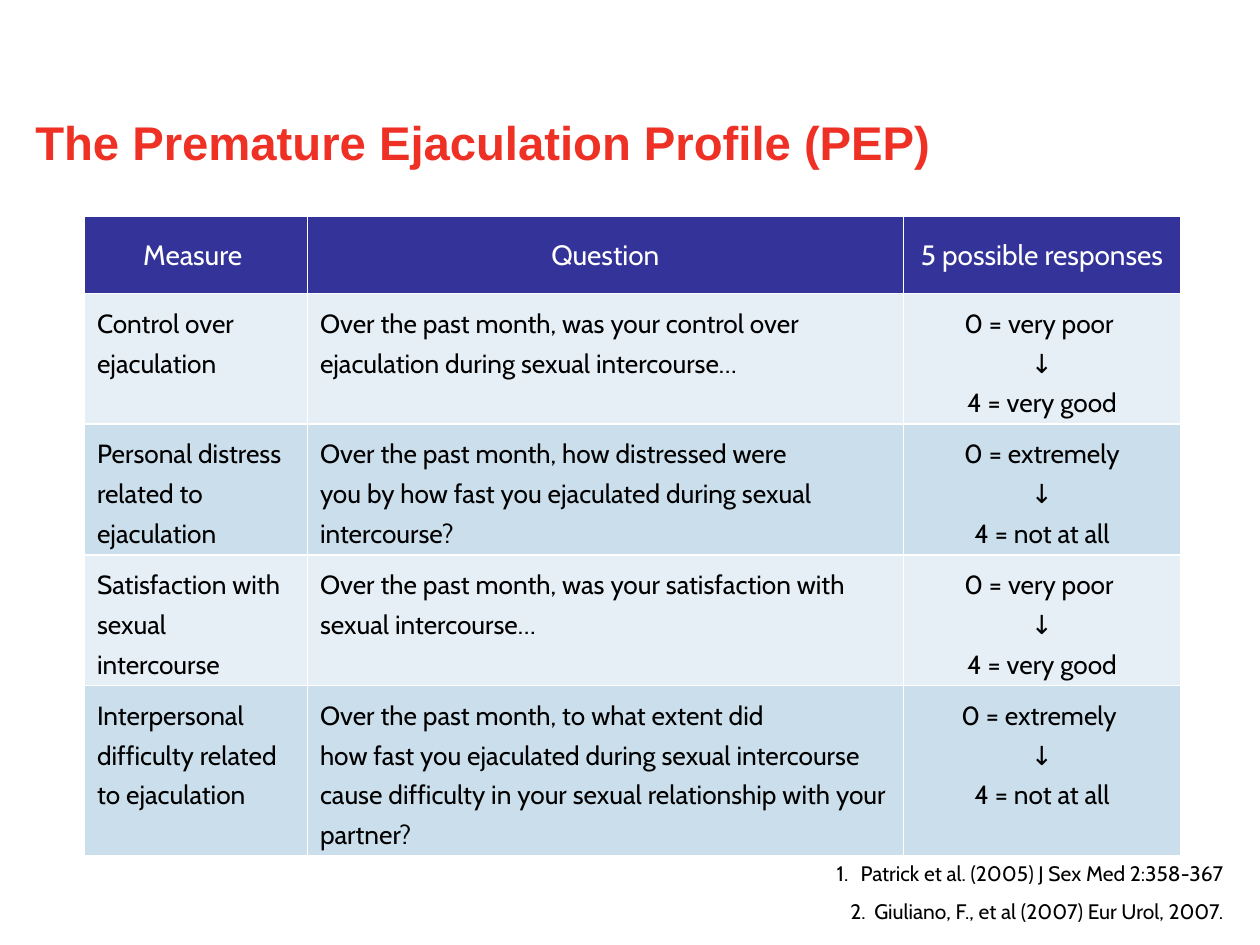
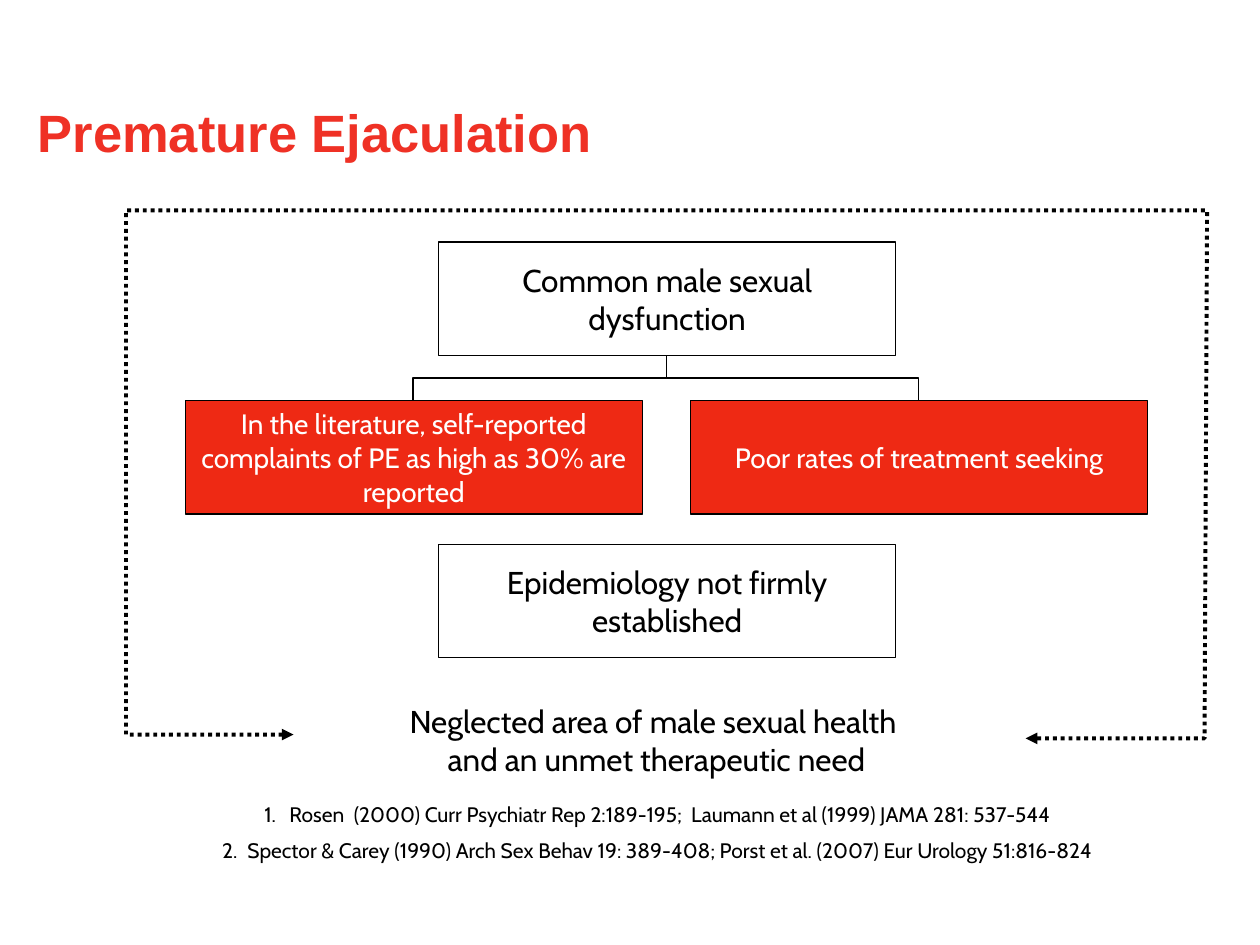
from dataclasses import dataclass, field
from typing import Any, NamedTuple

from lxml.etree import SubElement
from pptx import Presentation
from pptx.dml.color import RGBColor
from pptx.enum.dml import MSO_LINE
from pptx.enum.shapes import MSO_CONNECTOR, MSO_SHAPE
from pptx.enum.text import MSO_ANCHOR, PP_ALIGN
from pptx.oxml.ns import qn
from pptx.util import Emu, Pt

EMU_PER_PX = 9144  # 100 px to the inch


# Theme
@dataclass(frozen=True)
class Theme:
    title_font: str = "Arial"
    body_font: str = "Cabin"
    title: str = "EF3125"
    ink: str = "000000"
    paper: str = "FFFFFF"
    header: str = "333399"
    finding: str = "EE2914"
    bands: tuple[str, str] = ("E7EFF6", "CBDEEC")
    statement_size: int = 18
    finding_size: int = 16
    header_size: int = 16
    body_size: int = 15
    reference_size: int = 12


THEME = Theme()


class Box(NamedTuple):
    left: int
    top: int
    width: int
    height: int


class Point(NamedTuple):
    x: int
    y: int


class Insets(NamedTuple):
    left: int = 0
    top: int = 0
    right: int = 0
    bottom: int = 0


@dataclass(frozen=True)
class TextStyle:
    size: int
    color: str = THEME.ink
    font: str = THEME.body_font
    bold: bool = False
    paragraph: dict[str, Any] = field(default_factory=dict)
    gap: int = 0
    number_indent: int = 0


class Panel(NamedTuple):
    text: str
    box: Box
    fill: str
    style: TextStyle


CENTERED = {"alignment": PP_ALIGN.CENTER}
STATEMENT = TextStyle(THEME.statement_size, paragraph=CENTERED)
FINDING = TextStyle(THEME.finding_size, THEME.paper, paragraph=CENTERED)
HEADER = TextStyle(THEME.header_size, THEME.paper, paragraph=CENTERED)
QUESTION = TextStyle(THEME.body_size, paragraph={"line_spacing": 1.25})
RESPONSE = TextStyle(THEME.body_size, paragraph={"line_spacing": 1.25, **CENTERED})


# Shared helpers
def px(length: float) -> Emu:
    return Emu(round(length * EMU_PER_PX))


def rgb(color: str) -> RGBColor:
    return RGBColor.from_string(color)


def apply(target: Any, values: dict[str, Any]) -> None:
    for name, value in values.items():
        setattr(target, name, value)


def margins(insets: Insets) -> dict[str, Emu]:
    return {f"margin_{side}": px(inset) for side, inset in insets._asdict().items()}


def write(frame: Any, lines: list[str], style: TextStyle) -> None:
    for index, line in enumerate(lines):
        paragraph = frame.add_paragraph() if index else frame.paragraphs[0]
        paragraph.text = line
        if style.number_indent:
            properties = paragraph._p.get_or_add_pPr()
            indent = px(style.number_indent)
            properties.set("marL", str(indent))
            properties.set("indent", str(-indent))
            SubElement(properties, qn("a:buAutoNum"), type="arabicPeriod")
        apply(paragraph, style.paragraph)
        if index and style.gap:
            paragraph.space_before = Pt(style.gap)
        for run in paragraph.runs:
            apply(run.font, {"name": style.font, "size": Pt(style.size), "bold": style.bold})
            run.font.color.rgb = rgb(style.color)


def add_text(slide: Any, lines: list[str], box: Box, style: TextStyle,
             insets: Insets = Insets(), anchor: MSO_ANCHOR = MSO_ANCHOR.TOP) -> None:
    frame = slide.shapes.add_textbox(*map(px, box)).text_frame
    apply(frame, {"word_wrap": True, "vertical_anchor": anchor, **margins(insets)})
    write(frame, lines, style)


def add_title(slide: Any, text: str, box: Box, size: int) -> None:
    style = TextStyle(size, THEME.title, THEME.title_font, True, {"line_spacing": 0.95})
    add_text(slide, [text], box, style, Insets(top=8), MSO_ANCHOR.MIDDLE)


def set_line(line: Any, width: float) -> None:
    line.color.rgb = rgb(THEME.ink)
    line.width = Pt(width)


# Profile table
COLUMN_WIDTHS = (177, 473, 220)
ROW_HEIGHTS = (61, 100, 100, 100, 130)
HEADINGS = ("Measure ", "Question", "5 possible responses")
MEASURES = (
    ("Control over ejaculation",
     "Over the past month, was your control over ejaculation during sexual intercourse…",
     "0 = very poor \n↓\n4 = very good"),
    ("Personal distress related to ejaculation",
     "Over the past month, how distressed were \n"
     "you by how fast you ejaculated during sexual intercourse?",
     "0 = extremely\n↓\n4 = not at all"),
    ("Satisfaction with sexual intercourse",
     "Over the past month, was your satisfaction with sexual intercourse…",
     "0 = very poor \n↓\n4 = very good"),
    ("Interpersonal difficulty related to ejaculation",
     "Over the past month, to what extent did \n"
     "how fast you ejaculated during sexual intercourse cause difficulty "
     "in your sexual relationship with your partner?",
     "0 = extremely \n↓\n4 = not at all"),
)


def add_borders(cell: Any) -> None:
    properties = cell._tc.get_or_add_tcPr()
    for edge in ("lnL", "lnR", "lnT", "lnB"):
        border = SubElement(properties, qn(f"a:{edge}"), w=str(Pt(1)))
        SubElement(SubElement(border, qn("a:solidFill")), qn("a:srgbClr"), val=THEME.paper)


def fill_cell(cell: Any, text: str, row: int, column: int) -> None:
    insets = Insets(10, 5, 6 if row and column == 1 else 10, 5)
    anchor = MSO_ANCHOR.TOP if row else MSO_ANCHOR.MIDDLE
    apply(cell, {"vertical_anchor": anchor, **margins(insets)})
    add_borders(cell)
    cell.fill.solid()
    cell.fill.fore_color.rgb = rgb(THEME.bands[(row - 1) % 2] if row else THEME.header)
    body = RESPONSE if column == 2 else QUESTION
    write(cell.text_frame, [text], body if row else HEADER)


def add_profile_table(slide: Any) -> None:
    box = Box(67, 172, sum(COLUMN_WIDTHS), sum(ROW_HEIGHTS))
    table = slide.shapes.add_table(len(ROW_HEIGHTS), len(COLUMN_WIDTHS), *map(px, box)).table
    apply(table, {"first_row": False, "horz_banding": False})
    for column, width in zip(table.columns, COLUMN_WIDTHS):
        column.width = px(width)
    for row, height in zip(table.rows, ROW_HEIGHTS):
        row.height = px(height)
    for row_index, texts in enumerate((HEADINGS, *MEASURES)):
        for column_index, text in enumerate(texts):
            fill_cell(table.cell(row_index, column_index), text, row_index, column_index)


def build_profile(slide: Any) -> None:
    add_title(slide, "The Premature Ejaculation Profile (PEP)", Box(28, 85, 972, 51), 27)
    add_profile_table(slide)
    references = TextStyle(THEME.reference_size, gap=6, number_indent=19,
                           paragraph={"alignment": PP_ALIGN.RIGHT, "line_spacing": 1.1})
    add_text(slide, ["Patrick et al. (2005) J Sex Med 2:358-367",
                     "Giuliano, F., et al (2007) Eur Urol, 2007."],
             Box(92, 676, 889, 65), references, Insets(10, 5, 10, 5))


# Overview diagram
PANEL_WIDTH, PANEL_HEIGHT = 363, 90
STATEMENT_LEFT, FINDING_LEFTS, FINDING_TOP = 348, (147, 548), 318
STATEMENT_TOP = 192
PANELS = [
    Panel(text, Box(left, top, PANEL_WIDTH, PANEL_HEIGHT), fill, style)
    for text, left, top, fill, style in (
        ("Common male sexual dysfunction", STATEMENT_LEFT, STATEMENT_TOP,
         THEME.paper, STATEMENT),
        ("Epidemiology not firmly established", STATEMENT_LEFT, 432, THEME.paper, STATEMENT),
        ("In the literature, self-reported complaints of PE as high as 30% are reported",
         FINDING_LEFTS[0], FINDING_TOP, THEME.finding, FINDING),
        ("Poor rates of treatment seeking",
         FINDING_LEFTS[1], FINDING_TOP, THEME.finding, FINDING),
    )
]
NEED_LOOP = [Point(233, 583), Point(100, 583), Point(100, 167),
             Point(958, 167), Point(956, 586), Point(814, 586)]


def add_panel(slide: Any, panel: Panel) -> None:
    shape = slide.shapes.add_shape(MSO_SHAPE.RECTANGLE, *map(px, panel.box))
    shape.shadow.inherit = False
    shape.fill.solid()
    shape.fill.fore_color.rgb = rgb(panel.fill)
    set_line(shape.line, 0.75)
    apply(shape.text_frame, {"word_wrap": True, "vertical_anchor": MSO_ANCHOR.MIDDLE,
                             **margins(Insets(8, 8, 8, 8))})
    write(shape.text_frame, [panel.text], panel.style)


def add_branch(slide: Any, start: Point, end: Point) -> None:
    """Elbow that leaves downwards: a sideways elbow turned by a quarter."""
    center_x, center_y = (start.x + end.x) / 2, (start.y + end.y) / 2
    half_run, half_drop = abs(end.x - start.x) / 2, (end.y - start.y) / 2
    to_left = end.x < start.x
    reach = half_drop if to_left else -half_drop
    branch = slide.shapes.add_connector(
        MSO_CONNECTOR.ELBOW, px(center_x - reach), px(center_y - half_run),
        px(center_x + reach), px(center_y + half_run))
    branch._element.spPr.xfrm.set("rot", str((90 if to_left else 270) * 60000))
    set_line(branch.line, 1)
    SubElement(branch._element.spPr, qn("a:effectLst"))


def add_need_loop(slide: Any) -> None:
    start, *corners = NEED_LOOP
    builder = slide.shapes.build_freeform(*start, scale=EMU_PER_PX)
    builder.add_line_segments(corners, close=False)
    loop = builder.convert_to_shape()
    loop.shadow.inherit = False
    loop.fill.background()
    set_line(loop.line, 2.25)
    loop.line.dash_style = MSO_LINE.ROUND_DOT
    for end in ("headEnd", "tailEnd"):
        SubElement(loop.line._get_or_add_ln(), qn(f"a:{end}"), type="triangle")


def build_overview(slide: Any) -> None:
    add_text(slide, ["Neglected area of male sexual health \nand an unmet therapeutic need"],
             Box(292, 557, 458, 60), STATEMENT)
    references = TextStyle(THEME.reference_size, paragraph=CENTERED, gap=6, number_indent=20)
    add_text(slide, [
        "Rosen  (2000) Curr Psychiatr Rep 2:189-195;  Laumann et al (1999) JAMA 281: 537-544",
        "Spector & Carey (1990) Arch Sex Behav 19: 389-408; "
        "Porst et al. (2007) Eur Urology 51:816-824",
    ], Box(99, 636, 846, 55), references)
    add_title(slide, "Premature Ejaculation", Box(30, 75, 844, 56), 30)
    for panel in PANELS:
        add_panel(slide, panel)
    half = PANEL_WIDTH // 2
    for left in FINDING_LEFTS:
        add_branch(slide, Point(STATEMENT_LEFT + half, STATEMENT_TOP + PANEL_HEIGHT),
                   Point(left + half, FINDING_TOP))
    add_need_loop(slide)


def main() -> None:
    deck = Presentation()
    apply(deck, {"slide_width": px(1000), "slide_height": px(750)})
    for build in (build_profile, build_overview):
        build(deck.slides.add_slide(deck.slide_layouts[6]))
    deck.save("out.pptx")


if __name__ == "__main__":
    main()
